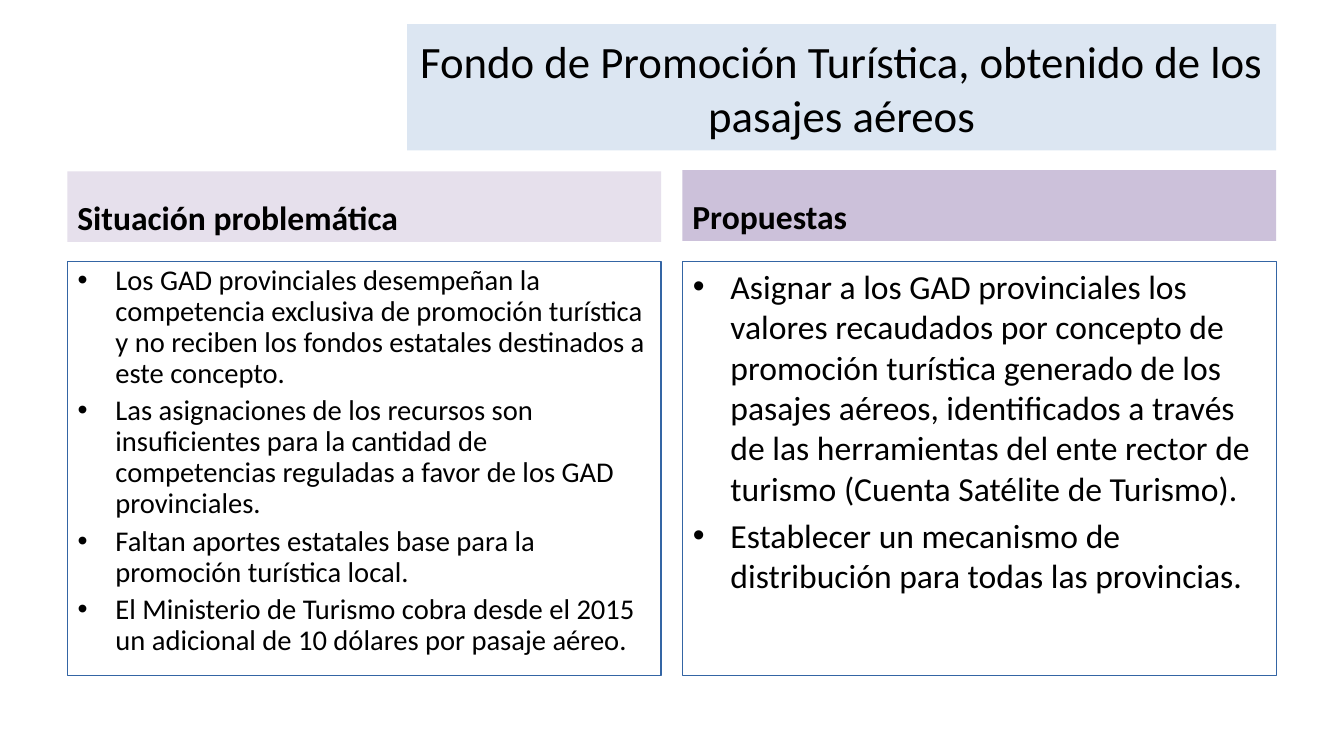
from lxml.etree import SubElement
from pptx import Presentation
from pptx.dml.color import RGBColor
from pptx.enum.shapes import MSO_SHAPE
from pptx.enum.text import MSO_ANCHOR, PP_ALIGN
from pptx.oxml.ns import qn
from pptx.util import Cm, Pt

COLORS = {
    "text": "000000",
    "title": "DCE6F2",
    "problem": "E6E0EC",
    "proposal": "CCC1DA",
    "border": "3465A4",
}
COLUMN_WIDTH, HEADING_HEIGHT, LIST_HEIGHT = 14.96, 1.78, 10.44
LIST_TOP = 6.58

PROBLEMS = [
    "Los GAD provinciales desempeñan la competencia exclusiva de promoción turística "
    "y no reciben los fondos estatales destinados a este concepto.",
    "Las asignaciones de los recursos son insuficientes para la cantidad de "
    "competencias reguladas a favor de los GAD provinciales.",
    "Faltan aportes estatales base para la promoción turística local.",
    "El Ministerio de Turismo cobra desde el 2015 un adicional de 10 dólares "
    "por pasaje aéreo.",
]
PROPOSALS = [
    "Asignar a los GAD provinciales los valores recaudados por concepto de promoción "
    "turística generado de los pasajes aéreos, identificados a través de las "
    "herramientas del ente rector de turismo (Cuenta Satélite de Turismo).",
    "Establecer un mecanismo de distribución para todas las provincias.",
]


def rgb(name):
    return RGBColor.from_string(COLORS[name])


def add_box(s, box, anchor, fill=None, line=None):
    """Add a rectangle, with box in cm, and return its text frame."""
    sp = s.shapes.add_shape(MSO_SHAPE.RECTANGLE, *map(Cm, box))
    sp.shadow.inherit = False
    if fill:
        sp.fill.solid()
        sp.fill.fore_color.rgb = rgb(fill)
    else:
        sp.fill.background()
    if line:
        sp.line.color.rgb = rgb(line)
        sp.line.width = Pt(0.75)
    else:
        sp.line.fill.background()
    tf = sp.text_frame
    tf.word_wrap = True
    tf.vertical_anchor = anchor
    return tf


def write(p, text, size, bold=False, **layout):
    r = p.add_run()
    r.text = text
    font = {"name": "Calibri", "size": Pt(size), "bold": bold}
    for target, values in ((p, layout), (r.font, font)):
        for key, value in values.items():
            setattr(target, key, value)
    r.font.color.rgb = rgb("text")


def add_bullet(p):
    pPr = p._p.get_or_add_pPr()
    pPr.set("marL", str(Cm(0.96)))
    pPr.set("indent", str(Cm(-0.95)))
    color = SubElement(pPr, qn("a:buClr"))
    SubElement(color, qn("a:srgbClr"), val=COLORS["text"])
    SubElement(pPr, qn("a:buFont"), typeface="Arial")
    SubElement(pPr, qn("a:buChar"), char="•")


def add_title(s, box, text):
    tf = add_box(s, box, MSO_ANCHOR.MIDDLE, fill="title")
    write(tf.paragraphs[0], text, 32, alignment=PP_ALIGN.CENTER)


def add_column(s, left, top, heading, fill, items, size, spacing):
    """Place a coloured heading with its framed bullet list below."""
    tf = add_box(s, (left, top, COLUMN_WIDTH, HEADING_HEIGHT), MSO_ANCHOR.BOTTOM, fill=fill)
    write(tf.paragraphs[0], heading, 24, bold=True, alignment=PP_ALIGN.LEFT)

    tf = add_box(s, (left, LIST_TOP, COLUMN_WIDTH, LIST_HEIGHT), MSO_ANCHOR.TOP, line="border")
    for i, item in enumerate(items):
        p = tf.add_paragraph() if i else tf.paragraphs[0]
        add_bullet(p)
        write(p, item, size, alignment=PP_ALIGN.LEFT, line_spacing=spacing,
              space_before=Pt(4.8 if i else 0))


def main():
    prs = Presentation()
    prs.slide_width, prs.slide_height = Cm(33.87), Cm(19.05)
    s = prs.slides.add_slide(prs.slide_layouts[6])
    add_title(s, (10.26, 0.61, 21.9, 3.18),
              "Fondo de Promoción Turística, obtenido de los pasajes aéreos")
    add_column(s, 1.7, 4.32, "Situación problemática", "problem", PROBLEMS, 20.4, 0.9)
    add_column(s, 17.2, 4.29, "Propuestas", "proposal", PROPOSALS, 24, 1.0)
    prs.save("out.pptx")


if __name__ == "__main__":
    main()
